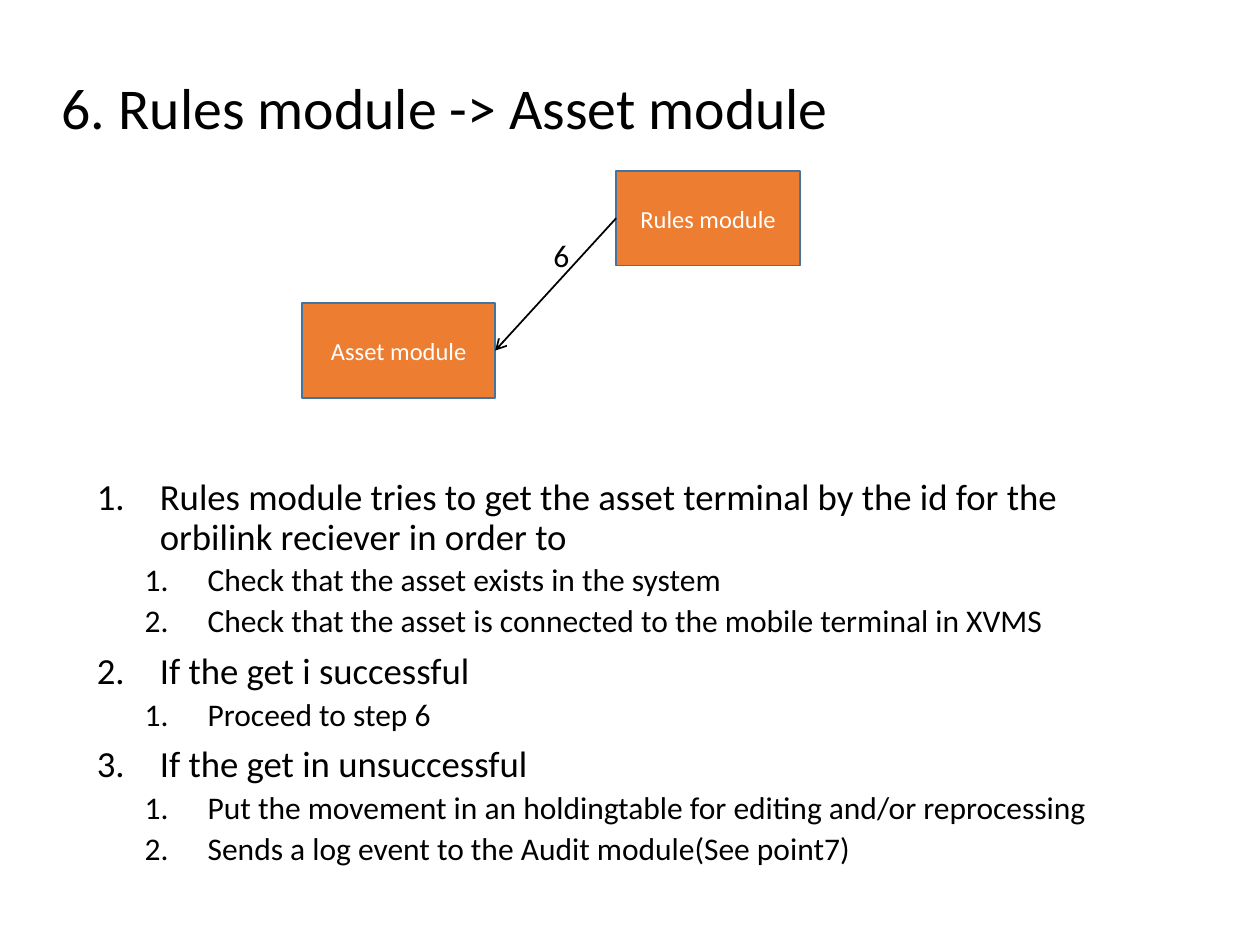
from dataclasses import dataclass

from lxml.etree import SubElement
from pptx import Presentation
from pptx.dml.color import RGBColor
from pptx.enum.shapes import MSO_CONNECTOR, MSO_SHAPE
from pptx.enum.text import MSO_ANCHOR, PP_ALIGN
from pptx.oxml.ns import qn
from pptx.util import Inches, Pt

# Content
TITLE = "6. Rules module -> Asset module"
STEPS = [
    (0, "Rules module tries to get the asset terminal by the id for the "
        "orbilink reciever in order to"),
    (1, "Check that the asset exists in the system"),
    (1, "Check that the asset is connected to the mobile terminal in XVMS"),
    (0, "If the get i successful"),
    (1, "Proceed to step 6"),
    (0, "If the get in unsuccessful"),
    (1, "Put the movement in an holdingtable for editing and/or reprocessing"),
    (1, "Sends a log event to the Audit module(See point7)"),
]
# Left, top, width and height as shares of the slide
MODULES = {
    "Rules module": (0.489, 0.181, 0.146, 0.1),
    "Asset module": (0.24, 0.321, 0.153, 0.1),
}
CALL = ("Rules module", "Asset module", "6")
TITLE_AREA = (0.039, 0.021, 0.862, 0.193)
CALL_AREA = (0.429, 0.243, 0.033, 0.053)
STEPS_AREA = (0.067, 0.5, 0.874, 0.483)


@dataclass(frozen=True)
class Theme:
    font: str = "Calibri"
    ink: RGBColor = RGBColor(0, 0, 0)
    paper: RGBColor = RGBColor(255, 255, 255)
    module: RGBColor = RGBColor(0xED, 0x7D, 0x31)
    outline: RGBColor = RGBColor(0x43, 0x73, 0x9E)
    title_size: float = 33
    label_size: float = 18
    module_size: float = 14
    line_width: float = 1


THEME = Theme()
# Format of each step level
LEVELS = [
    {"size": 21, "before": 7.5, "indent": 0.5},
    {"size": 18, "before": 3.8, "indent": 0.88},
]
HANGING = 0.5

presentation = Presentation()
presentation.slide_width, presentation.slide_height = Inches(10), Inches(7.5)
slide = presentation.slides.add_slide(presentation.slide_layouts[5])


def area(shares):
    sides = (presentation.slide_width, presentation.slide_height) * 2
    return [round(share * side) for share, side in zip(shares, sides)]


def set_values(target, values):
    for name, value in values.items():
        setattr(target, name, value)


def write(paragraph, text, size, color=THEME.ink, **values):
    run = paragraph.add_run()
    run.text = text
    set_values(run.font, {"name": THEME.font, "size": Pt(size)})
    run.font.color.rgb = color
    set_values(paragraph, values)


def number(paragraph, indent):
    properties = paragraph._p.get_or_add_pPr()
    properties.set("marL", str(Inches(indent)))
    properties.set("indent", str(-Inches(HANGING)))
    SubElement(properties, qn("a:buFont"), typeface="+mj-lt")
    SubElement(properties, qn("a:buAutoNum"), type="arabicPeriod")


# Title
title = slide.shapes.title
set_values(title, dict(zip(("left", "top", "width", "height"), area(TITLE_AREA))))
set_values(title.text_frame, {"vertical_anchor": MSO_ANCHOR.MIDDLE, "word_wrap": True})
write(title.text_frame.paragraphs[0], TITLE, THEME.title_size,
      alignment=PP_ALIGN.LEFT, line_spacing=0.9)

# Numbered steps
steps_frame = slide.shapes.add_textbox(*area(STEPS_AREA)).text_frame
steps_frame.word_wrap = True
for index, (level, text) in enumerate(STEPS):
    paragraph = steps_frame.add_paragraph() if index else steps_frame.paragraphs[0]
    style = LEVELS[level]
    write(paragraph, text, style["size"], level=level, line_spacing=0.9,
          space_before=Pt(style["before"]))
    number(paragraph, style["indent"])

# Module boxes
boxes = {}
for name, shares in MODULES.items():
    box = slide.shapes.add_shape(MSO_SHAPE.RECTANGLE, *area(shares))
    box.shadow.inherit = False
    box.fill.solid()
    box.fill.fore_color.rgb = THEME.module
    box.line.color.rgb = THEME.outline
    box.line.width = Pt(THEME.line_width)
    box.text_frame.vertical_anchor = MSO_ANCHOR.MIDDLE
    write(box.text_frame.paragraphs[0], name, THEME.module_size, THEME.paper,
          alignment=PP_ALIGN.CENTER)
    boxes[name] = box

# Call arrow from left side to right side
source, target, call_label = CALL
arrow = slide.shapes.add_connector(MSO_CONNECTOR.STRAIGHT, 0, 0, 0, 0)
arrow.begin_connect(boxes[source], 1)
arrow.end_connect(boxes[target], 3)
arrow.line.color.rgb = THEME.ink
arrow.line.width = Pt(THEME.line_width)
SubElement(arrow.line._get_or_add_ln(), qn("a:tailEnd"), type="arrow")
SubElement(arrow._element.spPr, qn("a:effectLst"))

# Call label
label_frame = slide.shapes.add_textbox(*area(CALL_AREA)).text_frame
label_frame.word_wrap = False
write(label_frame.paragraphs[0], call_label, THEME.label_size,
      alignment=PP_ALIGN.CENTER)

presentation.save("out.pptx")
